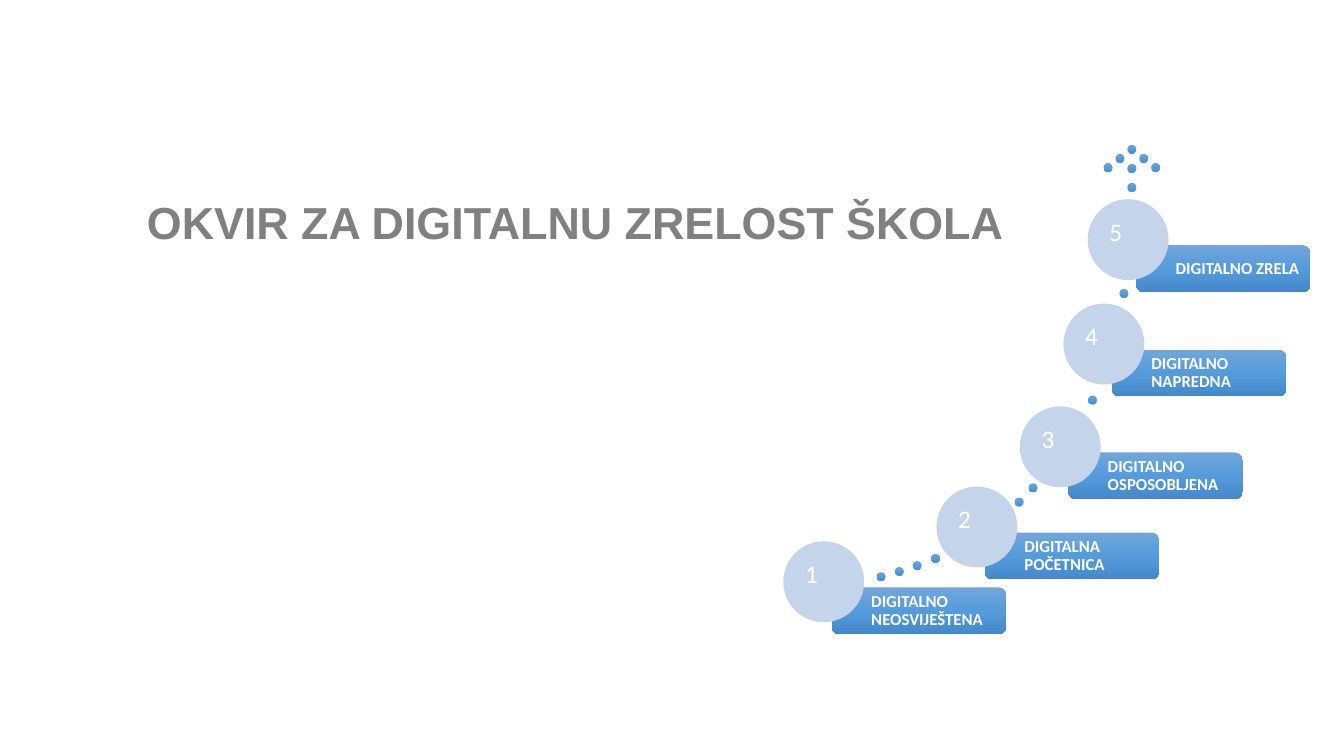
from copy import deepcopy

from pptx import Presentation
from pptx.dml.color import RGBColor
from pptx.enum.shapes import MSO_SHAPE
from pptx.enum.text import MSO_ANCHOR, MSO_AUTO_SIZE, PP_ALIGN
from pptx.oxml.ns import qn
from pptx.util import Cm, Pt

TITLE_GREY = RGBColor(0x80, 0x80, 0x80)
WHITE = RGBColor(0xFF, 0xFF, 0xFF)
CIRCLE_BLUE = RGBColor(0xC4, 0xD5, 0xEB)
DOT_OUTLINE = RGBColor(0x5B, 0x9B, 0xD5)
GRADIENT = (
    RGBColor(0x71, 0xA6, 0xDB),
    RGBColor(0x55, 0x9B, 0xDB),
    RGBColor(0x44, 0x8A, 0xCA),
)

# Left and top of each level's circle in cm, with the level's name
LEVELS = [
    (19.74, 13.64, "DIGITALNO NEOSVIJEŠTENA"),
    (23.6, 12.26, "DIGITALNA POČETNICA"),
    (25.7, 10.24, "DIGITALNO OSPOSOBLJENA"),
    (26.8, 7.65, "DIGITALNO NAPREDNA"),
    (27.41, 5.02, "DIGITALNO ZRELA"),
]
CIRCLE_SIZE = 2.04
LABEL_OFFSET = (1.22, 1.16)
LABEL_SIZE = (4.4, 1.18)

# Left and top of the dots between the levels, in cm
PATH_DOTS = [
    (23.47, 13.97), (23.01, 14.15), (22.56, 14.3), (22.1, 14.43),
    (25.93, 12.19), (25.58, 12.55), (27.43, 9.98), (28.22, 7.29),
]
DOT_SIZE = 0.21
ARROW_TIP = (28.42, 3.66)
ARROW_STEP = (0.3, 0.23)
STEM_STEP = 0.48


def add_plain_shape(slide, kind, left, top, width, height):
    shape = slide.shapes.add_shape(kind, Cm(left), Cm(top), Cm(width), Cm(height))
    shape.shadow.inherit = False
    shape.line.fill.background()
    return shape


def fill_with_gradient(shape):
    """Fill from top to bottom with three evenly spaced colours."""
    shape.fill.gradient()
    shape.fill.gradient_angle = 270
    first_stop = shape.element.spPr.find(".//" + qn("a:gs"))
    first_stop.addnext(deepcopy(first_stop))
    for index, (stop, color) in enumerate(zip(shape.fill.gradient_stops, GRADIENT)):
        stop.color.rgb = color
        stop.position = index / (len(GRADIENT) - 1)


def write(frame, text, font_name, size, color, bold):
    frame.text = text
    frame.word_wrap = True
    paragraph = frame.paragraphs[0]
    paragraph.alignment = PP_ALIGN.LEFT
    font = paragraph.font
    font.name, font.size, font.bold = font_name, Pt(size), bold
    font.color.rgb = color
    return paragraph


def add_title(slide):
    title = slide.shapes.title
    title.left, title.top = Cm(3.45), Cm(4.93)
    title.width, title.height = Cm(25.07), Cm(1.5)
    frame = title.text_frame
    paragraph = write(frame, "OKVIR ZA DIGITALNU ZRELOST ŠKOLA", "Arial", 32, TITLE_GREY, True)
    paragraph.line_spacing = 0.9
    frame.vertical_anchor = MSO_ANCHOR.TOP
    frame.auto_size = MSO_AUTO_SIZE.SHAPE_TO_FIT_TEXT


def add_dot(slide, left, top):
    dot = add_plain_shape(slide, MSO_SHAPE.OVAL, left, top, DOT_SIZE, DOT_SIZE)
    fill_with_gradient(dot)
    dot.line.color.rgb = DOT_OUTLINE
    dot.line.width = Pt(0.5)


def add_dotted_arrow(slide):
    tip_left, tip_top = ARROW_TIP
    step_x, step_y = ARROW_STEP
    for step in range(-2, 3):
        add_dot(slide, tip_left + step * step_x, tip_top + abs(step) * step_y)
    for step in (1, 2):
        add_dot(slide, tip_left, tip_top + step * STEM_STEP)


def add_level(slide, number, left, top, name):
    label = add_plain_shape(
        slide, MSO_SHAPE.ROUNDED_RECTANGLE,
        left + LABEL_OFFSET[0], top + LABEL_OFFSET[1], *LABEL_SIZE,
    )
    fill_with_gradient(label)
    frame = label.text_frame
    frame.margin_left = Cm(0.94)
    frame.margin_right = frame.margin_top = frame.margin_bottom = Cm(0.12)
    frame.vertical_anchor = MSO_ANCHOR.MIDDLE
    write(frame, name, "Calibri", 12, WHITE, True).line_spacing = 0.9

    circle = add_plain_shape(slide, MSO_SHAPE.OVAL, left, top, CIRCLE_SIZE, CIRCLE_SIZE)
    circle.fill.solid()
    circle.fill.fore_color.rgb = CIRCLE_BLUE
    circle.text_frame.vertical_anchor = MSO_ANCHOR.TOP
    write(circle.text_frame, str(number), "Calibri", 18, WHITE, False)


def main():
    presentation = Presentation()
    presentation.slide_width, presentation.slide_height = Cm(33.87), Cm(19.05)
    slide = presentation.slides.add_slide(presentation.slide_layouts[5])
    add_title(slide)
    for left, top in PATH_DOTS:
        add_dot(slide, left, top)
    add_dotted_arrow(slide)
    for number, (left, top, name) in enumerate(LEVELS, start=1):
        add_level(slide, number, left, top, name)
    presentation.save("out.pptx")


if __name__ == "__main__":
    main()
